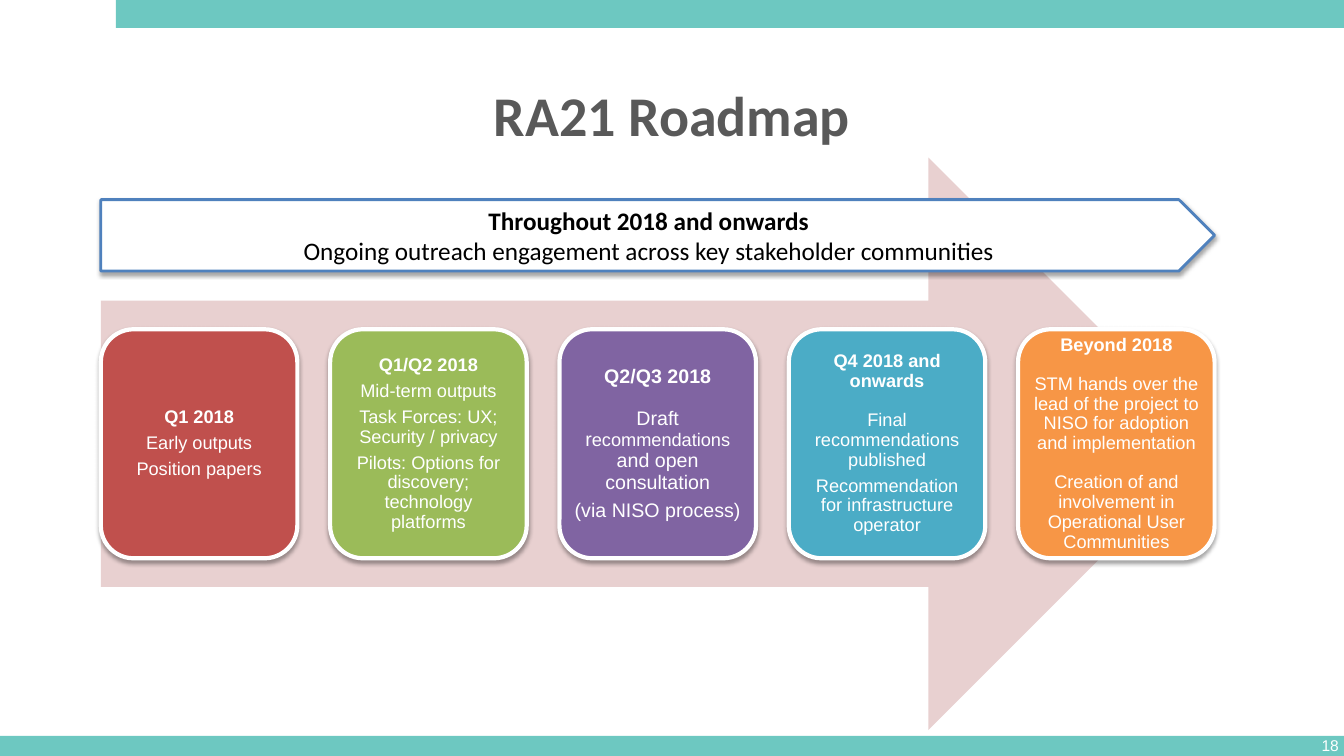
from lxml import etree
from pptx import Presentation
from pptx.dml.color import RGBColor
from pptx.enum.shapes import MSO_SHAPE
from pptx.enum.text import MSO_ANCHOR, PP_ALIGN
from pptx.oxml.ns import qn
from pptx.util import Pt

RECT, ROUND = MSO_SHAPE.RECTANGLE, MSO_SHAPE.ROUNDED_RECTANGLE
ARROW, PLATE = MSO_SHAPE.RIGHT_ARROW, MSO_SHAPE.PENTAGON
MIDDLE = MSO_ANCHOR.MIDDLE
CENTER, RIGHT = PP_ALIGN.CENTER, PP_ALIGN.RIGHT

HUES = {
    "teal": "6DC8C1", "gray": "595959", "pink": "E8D0D0", "blue": "4F81BD",
    "white": "FFFFFF", "black": "000000", "red": "C0504D", "green": "9BBB59",
    "purple": "8064A2", "aqua": "4BACC6", "orange": "F79646",
}
WIDE, HIGH = 960, 540
TIGHT, LOOSE = 0.35, 1.08

CARDS = [
    ("red", 13, "Q1 2018", [
        (TIGHT, ["Early outputs"]), (TIGHT, ["Position papers"])]),
    ("green", 13, "Q1/Q2 2018", [
        (TIGHT, ["Mid-term outputs"]),
        (TIGHT, ["Task Forces: UX; Security / privacy"]),
        (TIGHT, ["Pilots: Options for discovery; technology platforms"])]),
    ("purple", 14, "Q2/Q3 2018", [
        (LOOSE, ["Draft r", "ecommendations", " and open consultation"]),
        (TIGHT, ["(via NISO process)"])]),
    ("aqua", 13, "Q4 2018 and onwards", [
        (LOOSE, ["Final recommendations published"]),
        (TIGHT, ["Recommendation for infrastructure operator"])]),
    ("orange", 13, "Beyond 2018", [
        (LOOSE, ["STM hands over the lead of the project to NISO for adoption "
                 "and implementation"]),
        (LOOSE, ["Creation of and involvement in Operational User "
                 "Communities"])]),
]


def color(name):
    """Return the named colour."""
    return RGBColor.from_string(HUES[name])


def add_form(slide, kind, box, fill, line=None, width=0):
    """Add a filled preset shape, with a soft shadow if it is outlined."""
    form = slide.shapes.add_shape(kind, *map(Pt, box))
    form.shadow.inherit = False
    form.fill.solid()
    form.fill.fore_color.rgb = color(fill)
    if line:
        form.line.color.rgb = color(line)
        form.line.width = Pt(width)
        add_shade(form)
    else:
        form.line.fill.background()
    return form


def add_shade(form):
    """Give a shape a soft shadow straight below it."""
    effects = form.element.spPr.find(qn("a:effectLst"))
    shade = etree.SubElement(effects, qn("a:outerShdw"), blurRad=str(Pt(3)),
                             dist=str(Pt(1.8)), dir="5400000", rotWithShape="0")
    tint = etree.SubElement(shade, qn("a:srgbClr"), val=HUES["black"])
    etree.SubElement(tint, qn("a:alpha"), val="35000")


def set_frame(form, wrap=True):
    """Set even margins and middle anchoring, and return the frame."""
    frame = form.text_frame
    frame.word_wrap = wrap
    frame.vertical_anchor = MIDDLE
    frame.margin_left = frame.margin_right = Pt(3.6)
    frame.margin_top = frame.margin_bottom = Pt(3.6)
    return frame


def set_font(item, face, size, hue, bold=False, align=CENTER):
    """Style a paragraph and its runs."""
    item.alignment = align
    for run in item.runs:
        run.font.name = face
        run.font.size = Pt(size)
        run.font.bold = bold
        run.font.color.rgb = color(hue)


def add_label(slide, box, text, face, size, hue, bold=False, align=CENTER,
              wrap=True):
    """Add a one-line text box."""
    frame = set_frame(slide.shapes.add_textbox(*map(Pt, box)), wrap)
    frame.text = text
    set_font(frame.paragraphs[0], face, size, hue, bold, align)


def add_trim(slide, box):
    """Add the top and bottom bars, the title and the page number."""
    left, top, width, height = box
    add_form(slide, RECT, (left, top + height - 14.4, width, 14.4), "teal")
    add_form(slide, RECT, (left + 82.8, top, width - 82.8, 20), "teal")
    add_label(slide, (left + 48, top + 36.7, width - 96, 90), "RA21 Roadmap",
              "Calibri", 40, "gray", True)
    add_label(slide, (left + width - 20, top + height - 18, 20, 21), "18",
              "Arial", 11.1, "white", align=RIGHT, wrap=False)


def add_card(slide, box, hue, size, head, body):
    """Add one rounded card with a bold heading and spaced lines."""
    frame = set_frame(add_form(slide, ROUND, box, hue, "white", 3))
    frame.text = head
    item = frame.paragraphs[0]
    item.line_spacing = 0.9
    set_font(item, "Arial", size, "white", True)
    for gap, parts in body:
        item = frame.add_paragraph()
        item.line_spacing = 0.9
        item.space_before = Pt(round(gap * size, 2))
        for part in parts:
            item.add_run().text = part
        set_font(item, "Arial", size, "white")
        if len(parts) > 1:
            item.runs[1].font.size = Pt(size - 1)


def add_flow(slide, box):
    """Add the large arrow with its row of cards."""
    left, top, width, height = box
    add_form(slide, ARROW, box, "pink")
    wide, high = 140.4, height * 0.4
    step = (width - wide) / (len(CARDS) - 1)
    for spot, card in enumerate(CARDS):
        place = (left + spot * step, top + height * 0.3, wide, high)
        add_card(slide, place, *card)


def add_banner(slide, box):
    """Add the pointed banner above the cards."""
    frame = set_frame(add_form(slide, PLATE, box, "white", "blue", 2))
    frame.text = ("Throughout 2018 and onwards\n"
                  "Ongoing outreach engagement across key stakeholder "
                  "communities")
    for spot, item in enumerate(frame.paragraphs):
        set_font(item, "Calibri", 18, "black", spot == 0)


def main():
    """Build and save the slide."""
    deck = Presentation()
    deck.slide_width, deck.slide_height = Pt(WIDE), Pt(HIGH)
    slide = deck.slides.add_slide(deck.slide_layouts[6])
    add_trim(slide, (0, 0, WIDE, HIGH))
    add_flow(slide, (72, 112.5, 795.6, 409))
    add_banner(slide, (72, 142.6, 795.6, 51))
    deck.save("out.pptx")


if __name__ == "__main__":
    main()
